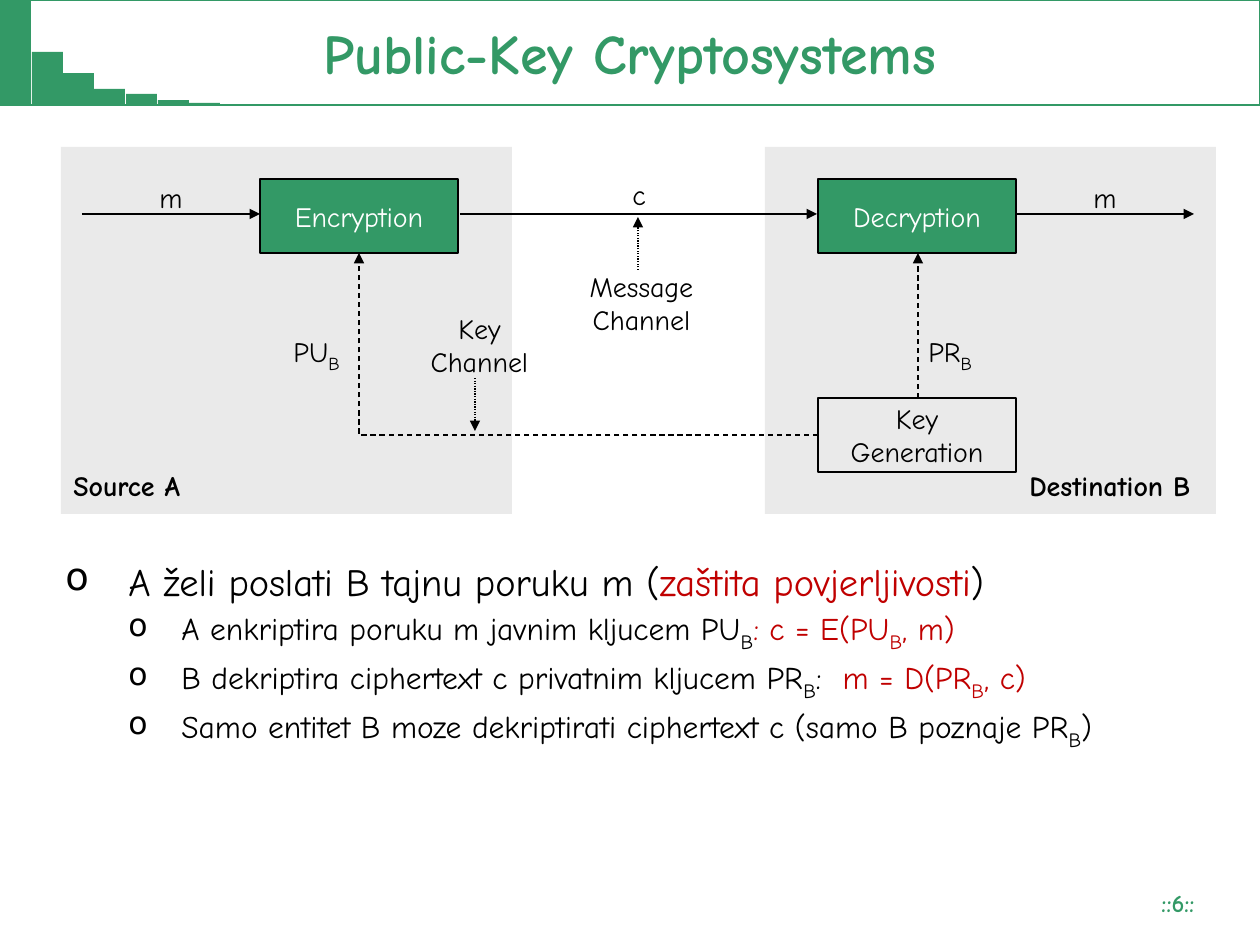
from dataclasses import dataclass

from lxml import etree
from pptx import Presentation
from pptx.dml.color import RGBColor
from pptx.enum.dml import MSO_LINE
from pptx.enum.shapes import MSO_CONNECTOR, MSO_SHAPE
from pptx.enum.text import MSO_ANCHOR, PP_ALIGN
from pptx.oxml.ns import qn
from pptx.util import Pt

RECT = MSO_SHAPE.RECTANGLE
STRAIGHT, ELBOW = MSO_CONNECTOR.STRAIGHT, MSO_CONNECTOR.ELBOW
DASH, DOT = MSO_LINE.DASH, MSO_LINE.ROUND_DOT
LEFT, CENTER, RIGHT = PP_ALIGN.LEFT, PP_ALIGN.CENTER, PP_ALIGN.RIGHT
TOP, MIDDLE = MSO_ANCHOR.TOP, MSO_ANCHOR.MIDDLE
EMU_PER_INCH, PX_PER_INCH = 914400, 126


@dataclass(frozen=True)
class Theme:
    font: str = "Comic Neue"
    green: str = "339966"
    panel: str = "EAEAEA"
    ink: str = "000000"
    paper: str = "FFFFFF"
    red: str = "C00000"
    title: int = 32
    bullet: int = 22
    sub_bullet: int = 18
    label: int = 16
    number: int = 14
    line_pitch: int = 28


THEME = Theme()


@dataclass(frozen=True)
class Box:
    x: int
    y: int
    w: int
    h: int

    def inner(self, x, y, w, h):
        return Box(self.x + x, self.y + y, w, h)

    def emu(self):
        return [px(v) for v in (self.x, self.y, self.w, self.h)]


def px(length):
    return round(length * EMU_PER_INCH / PX_PER_INCH)


def rgb(color):
    return RGBColor.from_string(color)


def style(run, size, color, bold=False):
    font = run.font
    font.name, font.size, font.bold = THEME.font, Pt(size), bold
    font.color.rgb = rgb(color)


def style_frame(frame, size, color, align, bold=False):
    for paragraph in frame.paragraphs:
        paragraph.alignment = align
        for run in paragraph.runs:
            style(run, size, color, bold)


def add_runs(paragraph, pieces, size):
    """Each piece is (text, subscript, color); subscripts are 2 pt larger."""
    for text, subscript, color in pieces:
        for part, lowered in ((text, False), (subscript, True)):
            if part:
                run = paragraph.add_run()
                run.text = part
                style(run, size + 2 * lowered, color)
                if lowered:
                    run.font._element.set("baseline", "-25000")


def add_rect(slide, box, fill=None, line=None):
    shape = slide.shapes.add_shape(RECT, *box.emu())
    shape.shadow.inherit = False
    if fill:
        shape.fill.solid()
        shape.fill.fore_color.rgb = rgb(fill)
    else:
        shape.fill.background()
    if line:
        shape.line.color.rgb = rgb(line)
        shape.line.width = Pt(1)
    else:
        shape.line.fill.background()
    return shape


def add_text(slide, box, text="", size=THEME.label, color=THEME.ink,
             align=LEFT, bold=False, wrap=False):
    frame = slide.shapes.add_textbox(*box.emu()).text_frame
    frame.word_wrap = wrap
    frame.vertical_anchor = TOP
    frame.text = text
    style_frame(frame, size, color, align, bold)
    return frame


def add_arrow(slide, box, start, end, dash=None, kind=STRAIGHT):
    points = [px(v) for x, y in (start, end) for v in (box.x + x, box.y + y)]
    arrow = slide.shapes.add_connector(kind, *points)
    arrow.line.color.rgb = rgb(THEME.ink)
    arrow.line.width = Pt(0.75)
    if dash:
        arrow.line.dash_style = dash
    etree.SubElement(arrow.line._get_or_add_ln(), qn("a:tailEnd"), type="triangle")
    etree.SubElement(arrow._element.spPr, qn("a:effectLst"))
    return arrow


def build_header(slide, box):
    # Descending steps, all resting on the bottom edge
    step = 63 / 2
    for i, height in enumerate((105, 53, 32, 16, 11, 5, 2)):
        add_rect(slide, box.inner(round(i * step), box.h - height, 31, height),
                 THEME.green)
    # Framed title
    title = slide.shapes.title
    title.left, title.top, title.width, title.height = box.emu()
    title.line.color.rgb = rgb(THEME.green)
    title.line.width = Pt(1)
    title.text_frame.text = "Public-Key Cryptosystems"
    title.text_frame.vertical_anchor = MIDDLE
    style_frame(title.text_frame, THEME.title, THEME.green, CENTER, True)


def build_diagram(slide, box):
    # Source and destination panels
    panel_w = 451
    for x in (0, box.w - panel_w):
        add_rect(slide, box.inner(x, 0, panel_w, box.h), THEME.panel)

    # Processing steps
    encrypt_x, decrypt_x, step_w, step_h = 199, 757, 198, 74
    for name, x, y, fill, color in (
            ("Encryption", encrypt_x, 32, THEME.green, THEME.paper),
            ("Decryption", decrypt_x, 32, THEME.green, THEME.paper),
            ("Key Generation", decrypt_x, 251, None, THEME.ink)):
        step = add_rect(slide, box.inner(x, y, step_w, step_h), fill, THEME.ink)
        step.text_frame.word_wrap = True
        step.text_frame.vertical_anchor = MIDDLE
        step.text_frame.text = name
        style_frame(step.text_frame, THEME.label, color, CENTER)

    # Message flow, channel pointers and private key
    flow_y, key_x = 67, 857
    for start, end, dash in (
            ((21, flow_y), (encrypt_x, flow_y), None),
            ((399, flow_y), (decrypt_x - 1, flow_y), None),
            ((955, flow_y), (1133, flow_y), None),
            ((577, 123), (577, 70), DOT),
            ((414, 231), (414, 284), DOT),
            ((key_x, 251), (key_x, 106), DASH)):
        add_arrow(slide, box, start, end, dash)

    # Public key: left from key generation, then up to encryption
    public_key = add_arrow(slide, box, (298, 106), (decrypt_x, 288), DASH, ELBOW)
    properties = public_key._element.spPr
    properties.find(qn("a:prstGeom")).set("prst", "bentConnector2")
    properties.find(qn("a:xfrm")).set("rot", "10800000")

    # Labels
    for text, x, y, w, h, align, bold in (
            ("m", 86, 27, 47, 47, LEFT, False),
            ("c", 559, 24, 40, 47, LEFT, False),
            ("m", 1020, 27, 47, 47, LEFT, False),
            ("Message\nChannel", 512, 116, 137, 81, CENTER, False),
            ("Key\nChannel", 356, 158, 125, 81, CENTER, False),
            ("Source A", 0, 315, 152, 47, LEFT, True),
            ("Destination B", 956, 315, 208, 47, LEFT, True)):
        add_text(slide, box.inner(x, y, w, h), text, align=align, bold=bold)
    for key, x in (("PU", 220), ("PR", 855)):
        frame = add_text(slide, box.inner(x, 178, 81, 47), wrap=True)
        add_runs(frame.paragraphs[0], [(key, "B", THEME.ink)], THEME.label)


def build_bullets(slide, box):
    ink, red = THEME.ink, THEME.red
    bullets = (
        (0, [("A želi poslati B tajnu poruku m (", "", ink),
             ("zaštita povjerljivosti", "", red), (")", "", ink)]),
        (1, [("A enkriptira poruku m javnim kljucem PU", "B", ink), (": ", "", red),
             ("c = E(PU", "B", red), (", m)", "", red)]),
        (1, [("B dekriptira ciphertext c privatnim kljucem PR", "B", ink),
             (":  ", "", ink), ("m = D(PR", "B", red), (", c)", "", red)]),
        (1, [("Samo entitet B moze dekriptirati ciphertext c (samo B poznaje PR",
              "B", ink), (")", "", ink)]),
    )
    sizes, margins, hangs = (THEME.bullet, THEME.sub_bullet), (63, 116), (63, 53)
    frame = add_text(slide, box, wrap=True)
    for i, (level, pieces) in enumerate(bullets):
        paragraph = frame.add_paragraph() if i else frame.paragraphs[0]
        paragraph.level = level
        paragraph.line_spacing = Pt(THEME.line_pitch)
        add_runs(paragraph, pieces, sizes[level])
        properties = paragraph._p.get_or_add_pPr()
        properties.set("marL", str(px(margins[level])))
        properties.set("indent", str(-px(hangs[level])))
        bullet_color = etree.SubElement(properties, qn("a:buClr"))
        etree.SubElement(bullet_color, qn("a:srgbClr"), val=ink)
        etree.SubElement(properties, qn("a:buChar"), char="o")


def main():
    deck = Presentation()
    deck.slide_width, deck.slide_height = px(1260), px(945)
    slide = deck.slides.add_slide(deck.slide_layouts[5])
    build_header(slide, Box(0, 0, 1260, 105))
    build_diagram(slide, Box(61, 147, 1155, 367))
    build_bullets(slide, Box(53, 549, 1176, 333))
    # Slide number
    add_text(slide, Box(1071, 882, 136, 42), "::6::", THEME.number, THEME.green,
             RIGHT, bold=True, wrap=True)
    deck.save("out.pptx")


if __name__ == "__main__":
    main()
